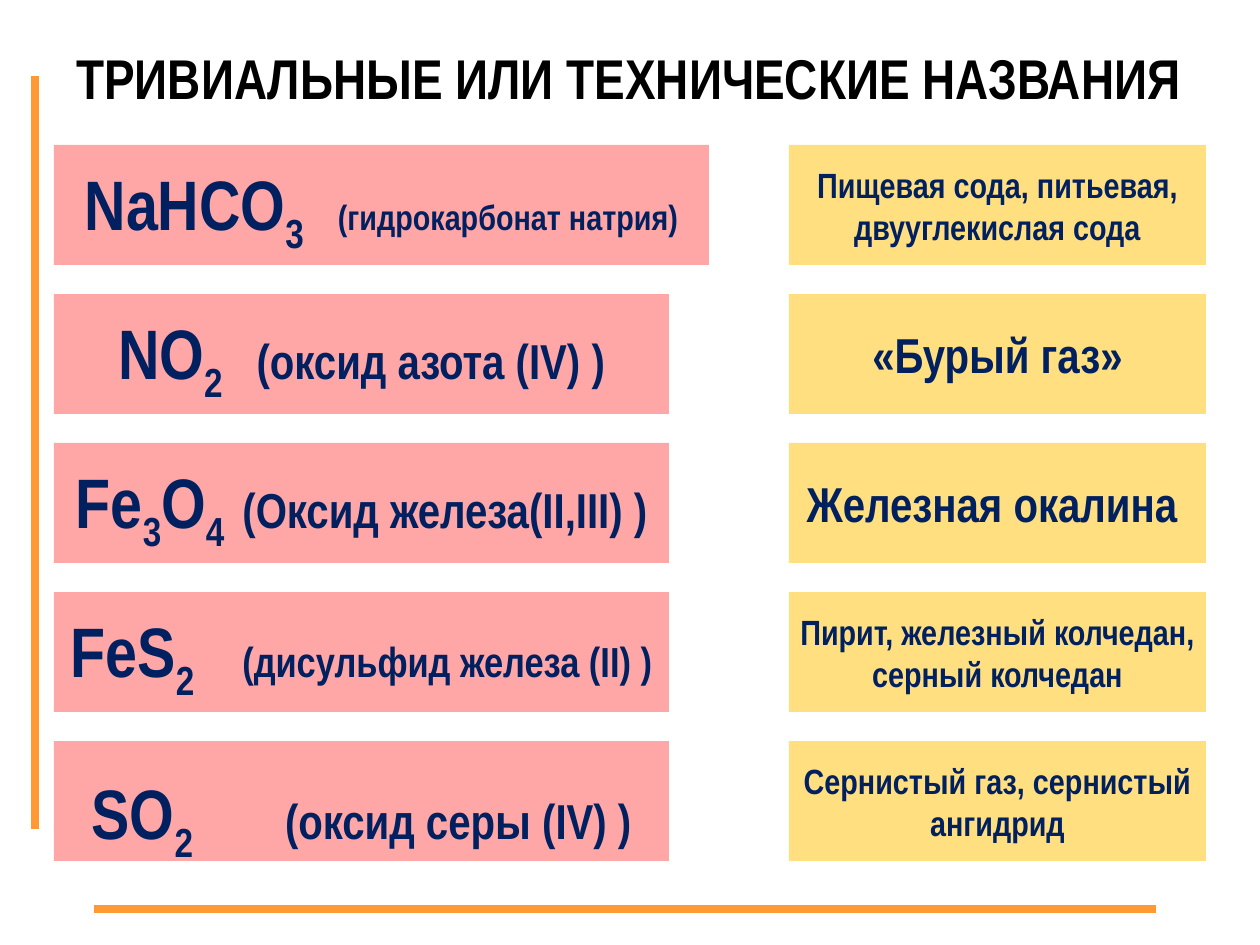
from itertools import groupby

from lxml.etree import SubElement
from pptx import Presentation
from pptx.dml.color import RGBColor
from pptx.enum.shapes import MSO_CONNECTOR as CONNECTOR, MSO_SHAPE as SHAPE
from pptx.enum.text import MSO_ANCHOR as ANCHOR, PP_ALIGN as ALIGN
from pptx.oxml.ns import qn
from pptx.util import Emu, Pt

TITLE = "ТРИВИАЛЬНЫЕ ИЛИ ТЕХНИЧЕСКИЕ НАЗВАНИЯ"
# formula, gap px, systematic name, its size, trivial name, its size, box width, top inset
ROWS = [
    ("NaHCO3", 34, "(гидрокарбонат натрия)", 20,
     "Пищевая сода, питьевая, двууглекислая сода", 20, 655, 0),
    ("NO2", 34, "(оксид азота (IV) )", 28, "«Бурый газ»", 28, 615, 0),
    ("Fe3O4", 18, "(Оксид железа(II,III) )", 28, "Железная окалина ", 28, 615, 0),
    ("FeS2", 48, "(дисульфид железа (II) )", 24,
     "Пирит, железный колчедан, серный колчедан", 20, 615, 0),
    ("SO2", 92, "(оксид серы (IV) )", 28,
     "Сернистый газ, сернистый ангидрид", 20, 615, 26),
]
RULES = [(35, 76, 35, 829), (1156, 909, 94, 909)]

FONT, NAVY, BLACK = "Arial Narrow", "002060", "000000"
RED, GOLD, ORANGE = "FF5050", "FFC000", "FF9933"
FORMULA_X, TRIVIAL_X, TRIVIAL_W = 54, 789, 417
TOP, PITCH, BOX_H = 145, 149, 120
PX_PER_PT = 126 / 72
SPACE_EM = 0.228  # width of a space in the font


def px(n):
    return Emu(round(n * 914400 / 126))


def rgb(color):
    return RGBColor.from_string(color)


def style(p, size, color=NAVY):
    p.font.name, p.font.size, p.font.bold = FONT, Pt(size), True
    p.font.color.rgb = rgb(color)


def add_run(p, text, size=None, **attrs):
    r = p.add_run()
    r.text = text
    if size:
        r.font.size = Pt(size)
    for name, value in attrs.items():
        r._r.get_or_add_rPr().set(name, str(value))


def add_box(x, y, w, color, size, inset=0):
    """Half-transparent rectangle; returns its centred paragraph."""
    sp = slide.shapes.add_shape(SHAPE.RECTANGLE, px(x), px(y), px(w), px(BOX_H))
    sp.shadow.inherit = False
    sp.line.fill.background()
    sp.fill.solid()
    sp.fill.fore_color.rgb = rgb(color)
    clr = sp._element.spPr.find(qn("a:solidFill"))[0]
    SubElement(clr, qn("a:alpha"), val="50000")
    tf = sp.text_frame
    tf.word_wrap, tf.vertical_anchor = True, ANCHOR.MIDDLE
    tf.margin_left = tf.margin_right = tf.margin_bottom = 0
    tf.margin_top = px(inset)
    p = tf.paragraphs[0]
    p.alignment = ALIGN.CENTER
    style(p, size)
    return p


prs = Presentation()
prs.slide_width, prs.slide_height = px(1260), px(945)
slide = prs.slides.add_slide(prs.slide_layouts[6])

# Title
tf = slide.shapes.add_textbox(px(64), px(37), px(1144), px(81)).text_frame
tf.word_wrap = False
tf.paragraphs[0].text = TITLE
style(tf.paragraphs[0], 32, BLACK)

# Orange rules
for x1, y1, x2, y2 in RULES:
    line = slide.shapes.add_connector(CONNECTOR.STRAIGHT, px(x1), px(y1), px(x2), px(y2))
    line.line.color.rgb, line.line.width = rgb(ORANGE), Pt(4.5)
    SubElement(line._element.spPr, qn("a:effectLst"))

# Formula and trivial name pairs
for i, (formula, gap, name, size, trivial, trivial_size, w, inset) in enumerate(ROWS):
    y = TOP + i * PITCH
    p = add_box(FORMULA_X, y, w, RED, 40, inset)
    p.line_spacing = 0.9
    for is_index, chars in groupby(formula, str.isdigit):
        add_run(p, "".join(chars), **({"baseline": -25000} if is_index else {}))
    # one space widened to the gap
    add_run(p, " ", size, spc=round(100 * (gap / PX_PER_PT - SPACE_EM * size)))
    add_run(p, name, size)

    p = add_box(TRIVIAL_X, y, TRIVIAL_W, GOLD, trivial_size)
    add_run(p, trivial)

prs.save("out.pptx")
